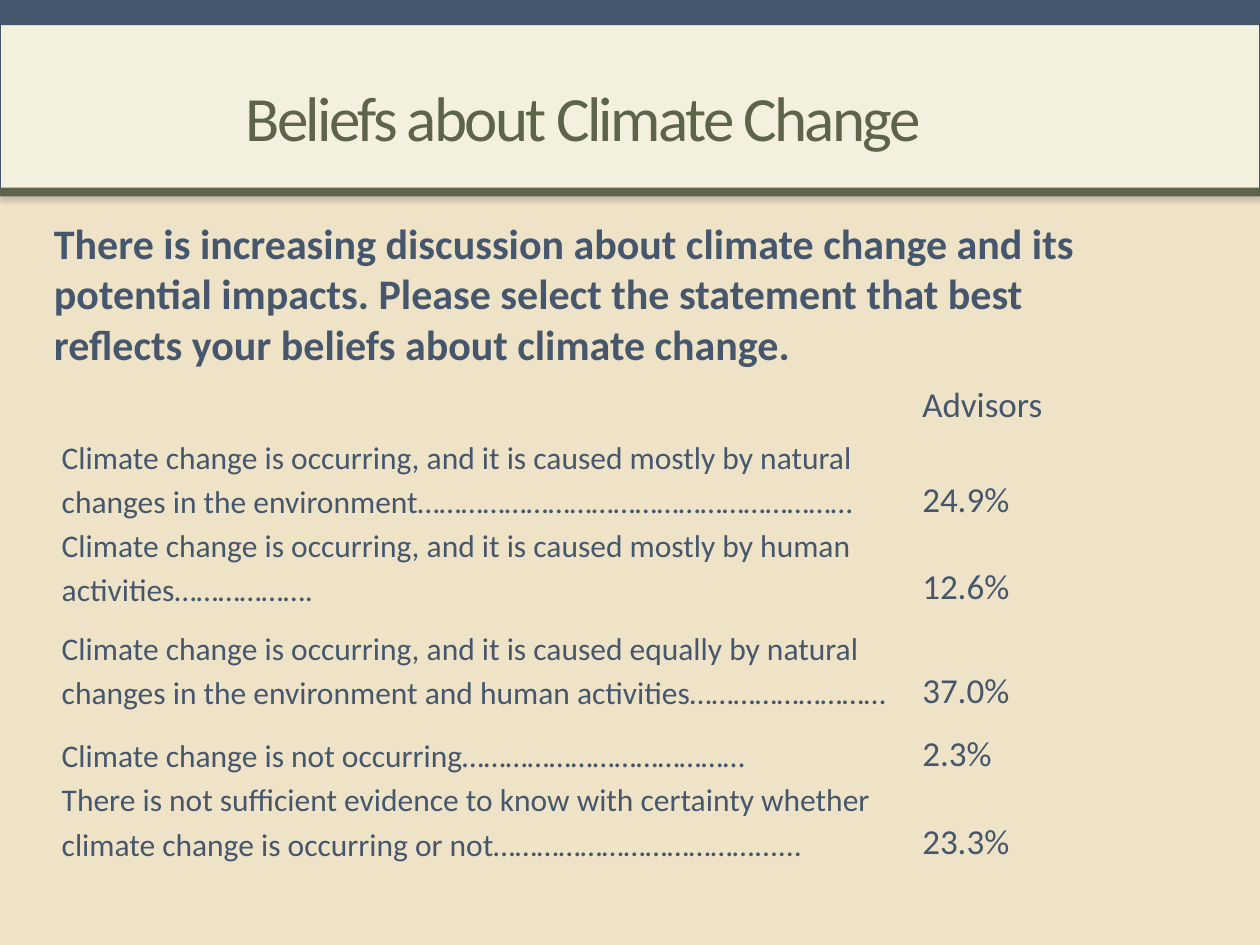
from lxml.etree import SubElement
from pptx import Presentation
from pptx.dml.color import RGBColor
from pptx.enum.shapes import MSO_SHAPE
from pptx.enum.text import MSO_ANCHOR
from pptx.oxml.ns import qn
from pptx.util import Inches, Pt

FONT = "Calibri"
SLATE, OLIVE, CREAM, SAND = "46576D", "5E6449", "F4F0DE", "EEE3C6"
NO_STYLE = "{2D5ABB26-0587-4C30-8999-92F81FD0307C}"

TITLE = "Beliefs about Climate Change"
QUESTION = ("There is increasing discussion about climate change and its potential impacts. "
            "Please select the statement that best reflects your beliefs about climate change.")
# Statement, share of advisors, row height
ROWS = [
    ("", "Advisors", 0.75),
    ("Climate change is occurring, and it is caused mostly by natural changes in the "
     "environment……………………………………………………", "24.9%", 0.75),
    ("Climate change is occurring, and it is caused mostly by human "
     "activities……………….", "12.6%", 0.42),
    ("Climate change is occurring, and it is caused equally by natural changes in the "
     "environment and human activities………………………", "37.0%", 0.83),
    ("Climate change is not occurring…………………………………", "2.3%", 0.5),
    ("There is not sufficient evidence to know with certainty whether climate change is "
     "occurring or not………………………………......", "23.3%", 0.7),
]
COLS = [6.83, 1.15, 0.93]
SIZES = [18, 20, 18]


def rgb(color):
    return RGBColor.from_string(color)


def box(*lengths):
    return [Inches(n) for n in lengths]


def style(p, size, color, bold=False):
    for r in p.runs:
        r.font.name, r.font.size, r.font.bold = FONT, Pt(size), bold
        r.font.color.rgb = rgb(color)


def add_band(s, top, height, color):
    sp = s.shapes.add_shape(MSO_SHAPE.RECTANGLE, *box(0, top, 10, height))
    sp.shadow.inherit = False
    sp.fill.solid()
    sp.fill.fore_color.rgb = rgb(color)
    sp.line.fill.background()
    return sp


def add_shadow(sp):
    effects = sp._element.spPr.find(qn("a:effectLst"))
    shadow = SubElement(effects, qn("a:outerShdw"), blurRad=str(Pt(3.1)),
                        dist=str(Pt(1.8)), dir="5400000", rotWithShape="0")
    color = SubElement(shadow, qn("a:srgbClr"), val="808080")
    SubElement(color, qn("a:alpha"), val="35000")


def add_text(s, text, place, size, color, bold=False):
    tf = s.shapes.add_textbox(*box(*place)).text_frame
    tf.word_wrap = True
    tf.vertical_anchor = MSO_ANCHOR.MIDDLE
    tf.text = text
    p = tf.paragraphs[0]
    style(p, size, color, bold)
    return p


def fill_cell(cell, text, size):
    cell.fill.background()
    cell.vertical_anchor = MSO_ANCHOR.BOTTOM
    cell.margin_left = cell.margin_right = Inches(0.07)
    cell.margin_top = cell.margin_bottom = 0
    cell.text = text
    p = cell.text_frame.paragraphs[0]
    p.line_spacing = 1.15
    p.space_before = p.space_after = Pt(2)
    style(p, size, SLATE)


prs = Presentation()
prs.slide_width, prs.slide_height = box(10, 7.5)
s = prs.slides.add_slide(prs.slide_layouts[6])
s.background.fill.solid()
s.background.fill.fore_color.rgb = rgb(SAND)

# Header bands
header = add_band(s, 0.19, 1.36, CREAM)
header.line.color.rgb = rgb("43556B")
header.line.width = Pt(0.75)
add_shadow(header)
add_band(s, 0, 0.2, SLATE)
add_band(s, 1.49, 0.07, OLIVE)

# Title
p = add_text(s, TITLE, (1.85, 0.42, 7.84, 0.99), 36, OLIVE)
p.line_spacing = Pt(44)
p.runs[0].font._element.set("spc", "-150")

# Answer table
table = s.shapes.add_table(len(ROWS), len(COLS), *box(
    0.42, 2.64, sum(COLS), sum(row[2] for row in ROWS))).table
table.first_row = table.horz_banding = False
table._tbl.tblPr.find(qn("a:tableStyleId")).text = NO_STYLE
for col, width in zip(table.columns, COLS):
    col.width = Inches(width)
for row, (statement, share, height) in zip(table.rows, ROWS):
    row.height = Inches(height)
    for cell, text, size in zip(row.cells, (statement, share, ""), SIZES):
        fill_cell(cell, text, size)

# Survey question
add_text(s, QUESTION, (0.33, 1.67, 8.5, 1.31), 24, SLATE, bold=True)

prs.save("out.pptx")
